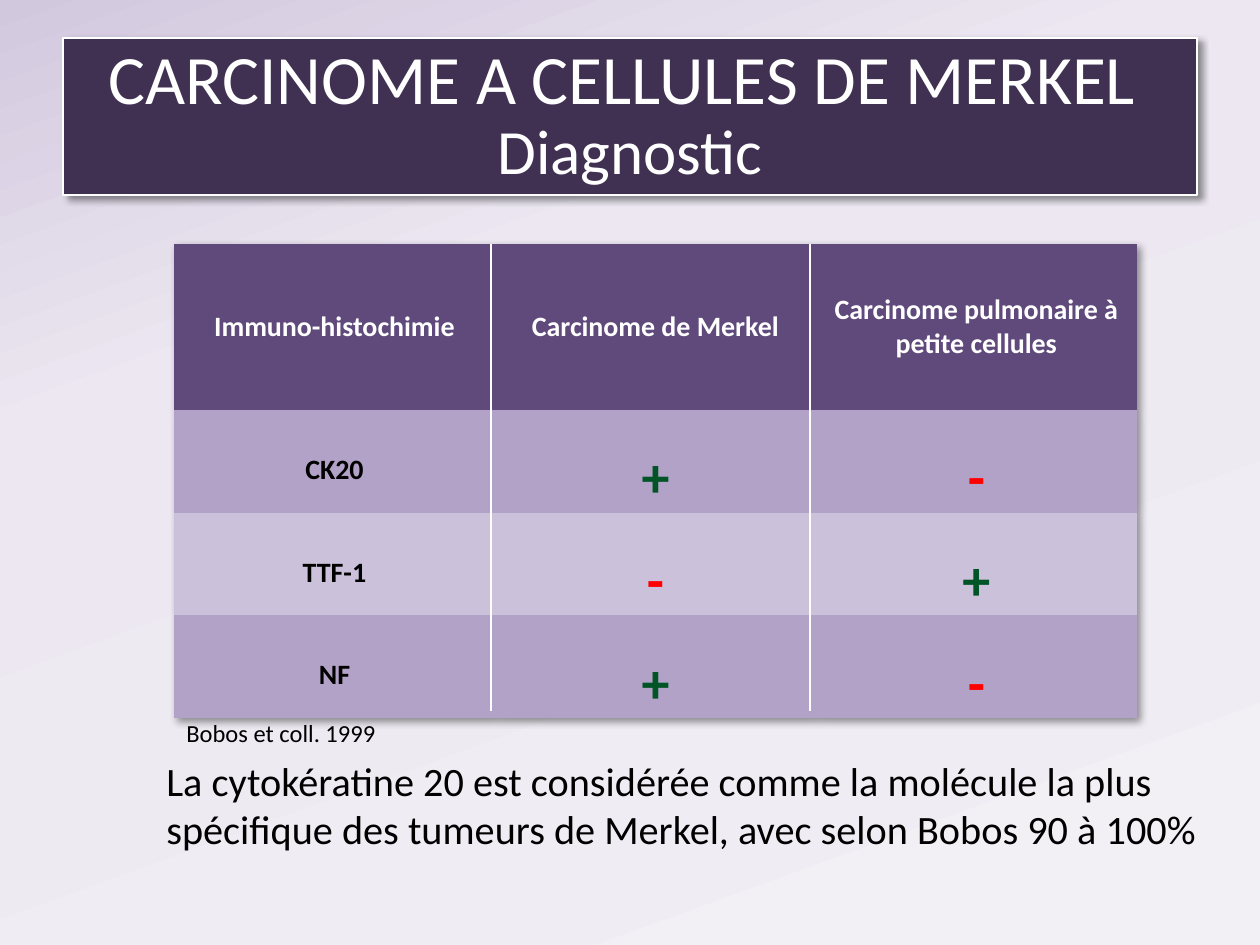
from copy import deepcopy
from pptx import Presentation
from pptx import util as u
from pptx.dml.color import RGBColor
from pptx.enum import shapes, text
from pptx.oxml import parse_xml
from pptx.oxml.ns import nsdecls, qn

SCALE = 914400 / 126
COLORS = {
    "white": "FFFFFF", "black": "000000", "title": "403152", "header": "604A7B",
    "band_dark": "B3A2C7", "band_light": "CCC1DA", "plus": "005426", "minus": "FF0000",
}
BACKDROP = [(0, "D2C8DE"), (0.31, "ECE7F1"), (1, "F2EFF5")]
SHADOW = (
    f'<a:effectLst {nsdecls("a")}><a:outerShdw blurRad="50800" dist="38100" dir="2700000" '
    'algn="tl" rotWithShape="0"><a:srgbClr val="000000"><a:alpha val="40000"/></a:srgbClr>'
    '</a:outerShdw></a:effectLst>'
)


def px(*lengths):
    return [u.Emu(round(length * SCALE)) for length in lengths]


def add_span(para, words, size, color, bold=False):
    span = para.add_run()
    span.text = words
    span.font.name = "Calibri"
    span.font.size = u.Pt(size)
    span.font.bold = bold
    span.font.color.rgb = RGBColor.from_string(COLORS[color])


deck = Presentation()
deck.slide_width, deck.slide_height = px(1260, 945)
page = deck.slides.add_slide(deck.slide_layouts[5])

# Background gradient
backdrop = page.background.fill
backdrop.gradient()
backdrop.gradient_angle = 290
first_stop = backdrop.gradient_stops[0]._gs
first_stop.addnext(deepcopy(first_stop))
for stop, (position, color) in zip(backdrop.gradient_stops, BACKDROP):
    stop.position = position
    stop.color.rgb = RGBColor.from_string(color)

# Title banner
title = page.shapes.title
title.left, title.top, title.width, title.height = px(63, 38, 1134, 157)
title.fill.solid()
title.fill.fore_color.rgb = RGBColor.from_string(COLORS["title"])
title.line.color.rgb = RGBColor.from_string(COLORS["white"])
title.line.width = u.Pt(0.75)
title._element.spPr.append(parse_xml(SHADOW))
title.text_frame.vertical_anchor = text.MSO_ANCHOR.MIDDLE
para = title.text_frame.paragraphs[0]
para.alignment = text.PP_ALIGN.CENTER
para.line_spacing = 0.9
add_span(para, "CARCINOME A CELLULES DE MERKEL ", 39.6, "white")
para.add_line_break()
add_span(para, "Diagnostic", 36, "white")

# Immunohistochemistry table
rows = [
    ("Immuno-histochimie", "Carcinome de Merkel", "Carcinome pulmonaire à petite cellules"),
    ("CK20", "+", "-"),
    ("TTF-1", "-", "+"),
    ("NF", "+", "-"),
]
signs = {"+": "plus", "-": "minus"}
fills = ["header", "band_dark", "band_light", "band_dark"]
table = page.shapes.add_table(4, 3, *px(174, 244, 963, 415)).table
properties = table._tbl.tblPr
properties.find(qn("a:tableStyleId")).text = "{2D5ABB26-0587-4C30-8999-92F81FD0307C}"
properties.insert(0, parse_xml(SHADOW))
for column in table.columns:
    column.width = px(321)[0]
for r, (labels, fill) in enumerate(zip(rows, fills)):
    table.rows[r].height = px(83 if r else 166)[0]
    for c, label in enumerate(labels):
        cell = table.cell(r, c)
        cell.fill.solid()
        cell.fill.fore_color.rgb = RGBColor.from_string(COLORS[fill])
        cell.vertical_anchor = text.MSO_ANCHOR.MIDDLE
        cell.margin_left = cell.margin_right = px(9)[0]
        cell.margin_top = cell.margin_bottom = 0
        para = cell.text_frame.paragraphs[0]
        para.alignment = text.PP_ALIGN.CENTER
        if r:
            para.line_spacing = 1.5
        color = signs.get(label, "black" if r else "white")
        add_span(para, label, 32 if label in signs else 16, color, bold=True)

# Source and comment under the table
notes = [
    ((174, 711, 217, 43), "Bobos et coll. 1999", 14, False,
     text.MSO_ANCHOR.MIDDLE, text.PP_ALIGN.JUSTIFY),
    ((154, 750, 1106, 115),
     "La cytokératine 20 est considérée comme la molécule la plus spécifique "
     "des tumeurs de Merkel, avec selon Bobos 90 à 100%", 23, True,
     text.MSO_ANCHOR.TOP, text.PP_ALIGN.LEFT),
]
for place, words, size, wrap, anchor, alignment in notes:
    frame = page.shapes.add_textbox(*px(*place)).text_frame
    frame.word_wrap = wrap
    frame.auto_size = text.MSO_AUTO_SIZE.SHAPE_TO_FIT_TEXT
    frame.vertical_anchor = anchor
    frame.paragraphs[0].alignment = alignment
    add_span(frame.paragraphs[0], words, size, "black")

# Column dividers
dividers = page.shapes.add_group_shape()
for x in (491, 810):
    divider = dividers.shapes.add_connector(
        shapes.MSO_CONNECTOR.STRAIGHT, *px(x, 244, x, 711))
    divider.line.color.rgb = RGBColor.from_string(COLORS["white"])
    divider.line.width = u.Pt(0.75)
    divider._element.spPr.append(parse_xml(f'<a:effectLst {nsdecls("a")}/>'))

deck.save("out.pptx")
